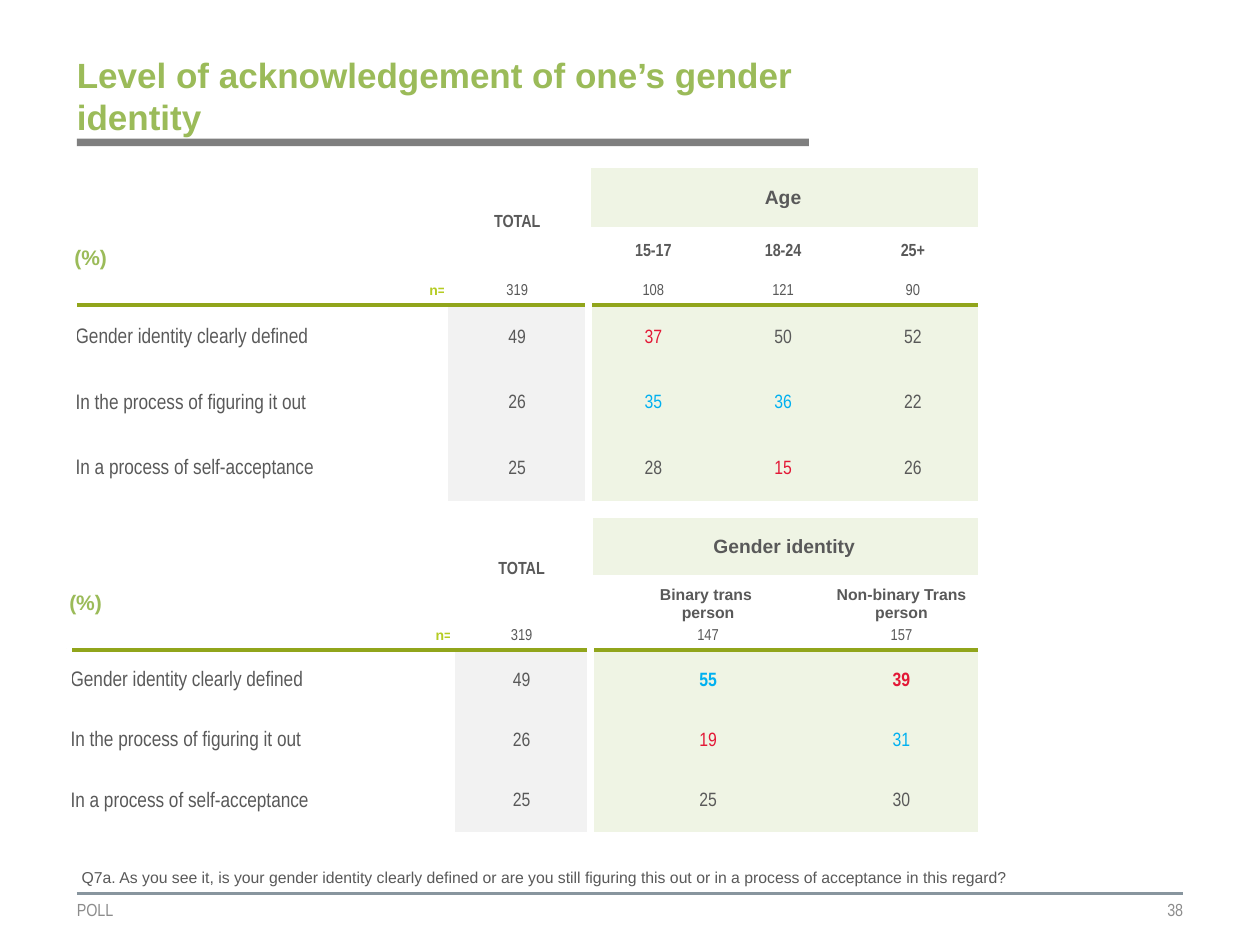
from copy import deepcopy

from lxml.etree import SubElement
from pptx import Presentation
from pptx.dml.color import RGBColor
from pptx.enum.shapes import MSO_CONNECTOR, MSO_SHAPE
from pptx.enum.text import MSO_ANCHOR, PP_ALIGN
from pptx.oxml import parse_xml
from pptx.oxml.ns import nsdecls, qn
from pptx.util import Inches, Pt

# Content: a value is a number, or a number with its tone
TITLE = "Level of acknowledgement of one’s gender identity"
QUESTION = ("Q7a. As you see it, is your gender identity clearly defined or are you "
            "still figuring this out or in a process of acceptance in this regard?")
FOOTER, PAGE = "POLL", "38"
LABELS = ["Gender identity clearly defined", "In the process of figuring it out",
          "In a process of self-acceptance"]
TABLES = [
    {"group": "Age", "place": (0.59, 1.33), "columns": [2.95, 1.13, 1.03, 1.03, 1.03],
     "rows": [0.28, 0.16, 0.39, 0.22] + [0.52] * 3,
     "heads": ["15-17", "18-24", "25+"], "head style": "narrow head",
     "bases": [319, 108, 121, 90],
     "values": [[49, (37, "low"), 50, 52],
                [26, (35, "high"), (36, "high"), 22],
                [25, 28, (15, "low"), 26]]},
    {"group": "Gender identity", "place": (0.55, 4.11), "columns": [3.04, 1.1, 1.86, 1.21],
     "rows": [0.26, 0.19, 0.37, 0.22] + [0.48] * 3,
     "heads": ["Binary trans \vperson", "Non-binary Trans person"], "head style": "wide head",
     "bases": [319, 147, 157],
     "values": [[49, (55, "high bold"), (39, "low bold")],
                [26, (19, "low"), (31, "high")],
                [25, 25, 30]]},
]

# Theme: colours, and text styles as (size, font, colour, bold)
COLOURS = {"title": "9BBB59", "text": "595959", "footer": "8C8C8C", "base": "B5CC22",
           "low": "E31836", "high": "00B0F0", "rule": "91A51B", "gap": "FFFFFF",
           "group": "EFF4E4", "total": "F2F2F2", "bar": "7F7F7F", "footer line": "88959E"}
STYLES = {
    "title": (20, "Arial", "title", True),
    "question": (9, "Arial", "text", False),
    "footer": (10, "Arial Narrow", "footer", False),
    "group": (11, "Arial", "text", True),
    "narrow head": (10, "Arial Narrow", "text", True),
    "wide head": (9, "Arial", "text", True),
    "unit": (12, "Arial", "title", True),
    "base mark": (8, "Arial", "base", True),
    "base": (9, "Arial Narrow", "text", False),
    "label": (12, "Arial Narrow", "text", False),
    "value": (11, "Arial Narrow", "text", False),
    "low": (11, "Arial Narrow", "low", False),
    "high": (11, "Arial Narrow", "high", False),
    "low bold": (11, "Arial Narrow", "low", True),
    "high bold": (11, "Arial Narrow", "high", True),
}
LEFT, RIGHT, TITLE_WIDTH, FOOTER_TOP = 0.61, 9.39, 5.81, 7.09
PLAIN_TABLE = "{2D5ABB26-0587-4C30-8999-92F81FD0307C}"
BASE_ROW, FIRST_BODY_ROW = 3, 4


def colour(name):
    return RGBColor.from_string(COLOURS[name])


def write(frame, text, style, align=PP_ALIGN.LEFT, spacing=None):
    paragraph = frame.paragraphs[0]
    paragraph.text = str(text)
    paragraph.alignment = align
    if spacing:
        paragraph.line_spacing = spacing
    size, font, tone, bold = STYLES[style]
    for run in paragraph.runs:
        for name, value in {"size": Pt(size), "name": font, "bold": bold}.items():
            setattr(run.font, name, value)
        run.font.color.rgb = colour(tone)
    # Line breaks take the size of the text around them
    for line_break in paragraph._p.findall(qn("a:br")):
        line_break.append(deepcopy(paragraph.runs[0]._r.rPr))


def add_text(slide, box, text, style, align=PP_ALIGN.LEFT, margin=0,
             anchor=MSO_ANCHOR.MIDDLE):
    frame = slide.shapes.add_textbox(*map(Inches, box)).text_frame
    frame.word_wrap = True
    frame.vertical_anchor = anchor
    if margin == 0:
        for side in ("left", "top", "right", "bottom"):
            setattr(frame, f"margin_{side}", 0)
    write(frame, text, style, align)


def fill_cell(cell, text, style, align=PP_ALIGN.CENTER, anchor=MSO_ANCHOR.MIDDLE,
              margins=(0.01, 0.01, 0.01, 0), spacing=None):
    for side, size in zip(("left", "top", "right", "bottom"), margins):
        setattr(cell, f"margin_{side}", Inches(size))
    cell.vertical_anchor = anchor
    write(cell.text_frame, text, style, align, spacing)


def borders(row, column):
    """Visible sides of a cell, as (colour, points)."""
    sides = {}
    body = row >= FIRST_BODY_ROW
    if column == 0:
        sides["R"] = ("gap", 3)
        if row == FIRST_BODY_ROW:
            sides["L"] = ("gap", 3)
    elif column == 1:
        sides.update(L=("gap", 3), R=("gap", 4.5 if body else 3))
    elif column == 2:
        sides["L"] = ("gap", 4.5 if body else 3)
    if row == FIRST_BODY_ROW:
        sides["T"] = ("rule", 3)
    if row == BASE_ROW:
        sides["B"] = ("rule", 3)
    return sides


def prepare_cell(cell, row, column):
    in_group = column >= 2 and (row < 2 or row >= FIRST_BODY_ROW)
    in_total = column == 1 and row >= FIRST_BODY_ROW
    if in_group or in_total:
        cell.fill.solid()
        cell.fill.fore_color.rgb = colour("group" if in_group else "total")
    else:
        cell.fill.background()
    properties = cell._tc.get_or_add_tcPr()
    sides = borders(row, column)
    # Hidden sides are stated too, so that no neighbour's line shows there
    for index, side in enumerate("LRTB"):
        tone, width = sides.get(side, (None, 0))
        paint = (f'<a:solidFill><a:srgbClr val="{COLOURS[tone]}"/></a:solidFill>'
                 if tone else "<a:noFill/>")
        properties.insert(index, parse_xml(
            f'<a:ln{side} {nsdecls("a")} w="{int(Pt(width))}">{paint}</a:ln{side}>'))
    # Empty cells must not stretch their row
    cell.margin_top = cell.margin_bottom = 0
    cell.text_frame.paragraphs[0]._p.get_or_add_endParaRPr().set("sz", "100")


def add_result_table(slide, data):
    columns, rows = data["columns"], data["rows"]
    box = (*data["place"], sum(columns), sum(rows))
    table = slide.shapes.add_table(len(rows), len(columns), *map(Inches, box)).table
    table.first_row = table.horz_banding = False
    table._tbl.tblPr.find(qn("a:tableStyleId")).text = PLAIN_TABLE
    for column, width in zip(table.columns, columns):
        column.width = Inches(width)
    for row, height in zip(table.rows, rows):
        row.height = Inches(height)
    for row in range(len(rows)):
        for column in range(len(columns)):
            prepare_cell(table.cell(row, column), row, column)

    # Heading rows
    for first, last in (((0, 1), (2, 1)), ((0, 2), (1, len(columns) - 1)), ((1, 0), (2, 0))):
        table.cell(*first).merge(table.cell(*last))
    fill_cell(table.cell(0, 1), "TOTAL", "narrow head")
    fill_cell(table.cell(0, 2), data["group"], "group")
    side_format = {"margins": (0, 0.05, 0, 0.05), "spacing": 0.95}
    fill_cell(table.cell(1, 0), "(%)", "unit", PP_ALIGN.LEFT, MSO_ANCHOR.BOTTOM, **side_format)
    fill_cell(table.cell(BASE_ROW, 0), "n=", "base mark", PP_ALIGN.RIGHT, **side_format)
    head_anchor = MSO_ANCHOR.BOTTOM if data["head style"] == "wide head" else MSO_ANCHOR.MIDDLE
    for column, head in enumerate(data["heads"], 2):
        fill_cell(table.cell(2, column), head, data["head style"], anchor=head_anchor)
    for column, base in enumerate(data["bases"], 1):
        fill_cell(table.cell(BASE_ROW, column), base, "base")

    # Body rows
    for row, (label, values) in enumerate(zip(LABELS, data["values"]), FIRST_BODY_ROW):
        fill_cell(table.cell(row, 0), label, "label", PP_ALIGN.LEFT)
        for column, value in enumerate(values, 1):
            number, style = value if isinstance(value, tuple) else (value, "value")
            fill_cell(table.cell(row, column), number, style)


def main():
    presentation = Presentation()
    presentation.slide_width, presentation.slide_height = Inches(10), Inches(7.5)
    slide = presentation.slides.add_slide(presentation.slide_layouts[6])

    # Footer line and title bar
    line = slide.shapes.add_connector(
        MSO_CONNECTOR.STRAIGHT, *map(Inches, (LEFT, FOOTER_TOP, RIGHT, FOOTER_TOP)))
    line.line.color.rgb = colour("footer line")
    line.line.width = Pt(1.5)
    SubElement(line._element.spPr, qn("a:effectLst"))
    bar = slide.shapes.add_shape(
        MSO_SHAPE.RECTANGLE, *map(Inches, (LEFT, 1.1, TITLE_WIDTH, 0.06)))
    bar.shadow.inherit = False
    bar.fill.solid()
    bar.fill.fore_color.rgb = colour("bar")
    bar.line.fill.background()

    # Texts around the tables
    add_text(slide, (LEFT, FOOTER_TOP, 2.8, 0.26), FOOTER, "footer")
    add_text(slide, (RIGHT - 2.84, FOOTER_TOP, 2.84, 0.26), PAGE, "footer", PP_ALIGN.RIGHT)
    add_text(slide, (LEFT, 0.41, TITLE_WIDTH, 0.69), TITLE, "title")
    add_text(slide, (0.55, 6.84, 8.55, 0.25), QUESTION, "question", margin=None,
             anchor=MSO_ANCHOR.TOP)

    for data in TABLES:
        add_result_table(slide, data)
    presentation.save("out.pptx")


if __name__ == "__main__":
    main()
